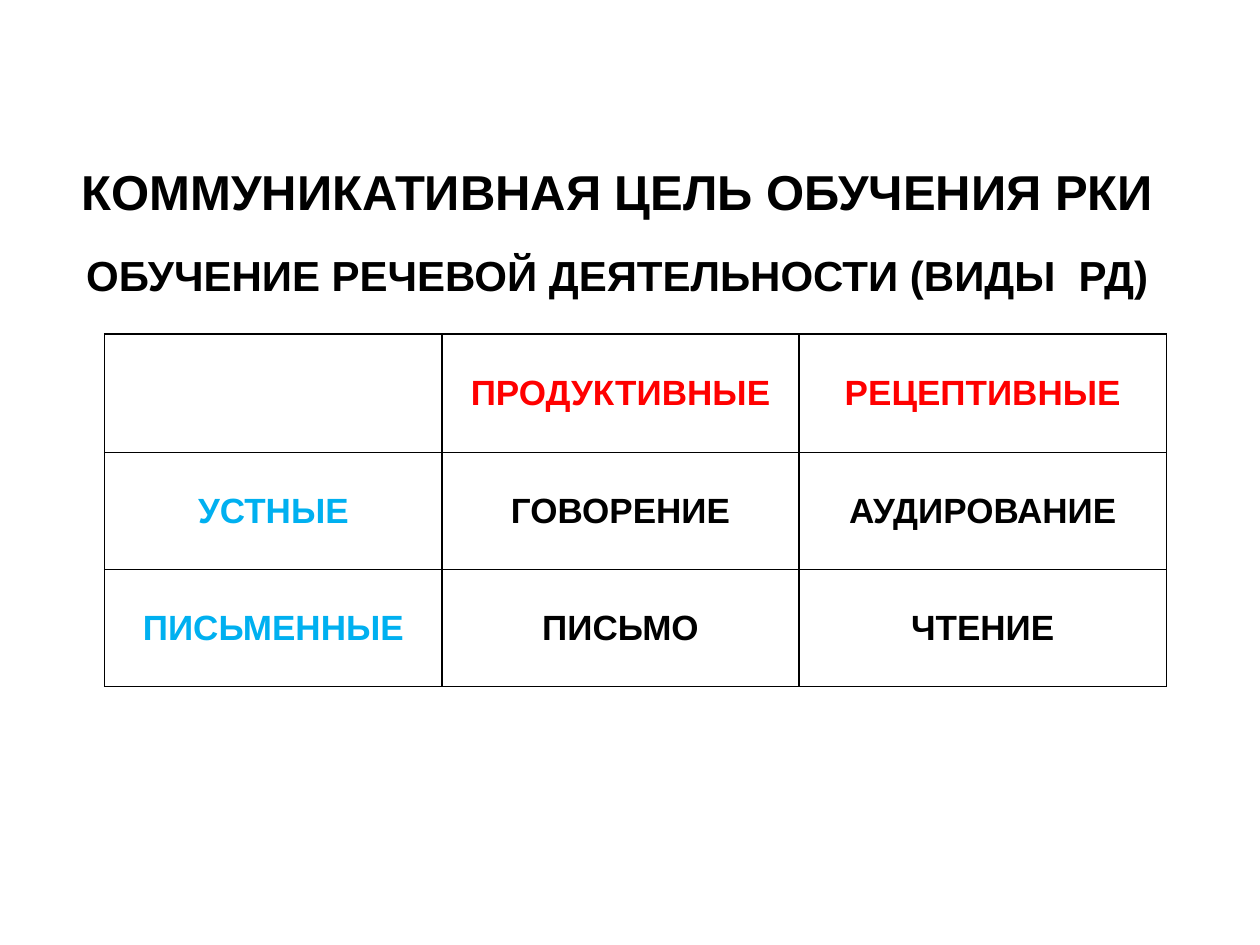
"""Build a slide with a title and a table of the kinds of speech activity."""
from lxml import etree
from pptx import Presentation
from pptx.dml.color import RGBColor
from pptx.enum.text import MSO_ANCHOR, MSO_AUTO_SIZE, PP_ALIGN
from pptx.oxml.ns import qn
from pptx.util import Inches, Pt

CENTER = PP_ALIGN.CENTER
TOP, MIDDLE = MSO_ANCHOR.TOP, MSO_ANCHOR.MIDDLE
NO_FIT = MSO_AUTO_SIZE.NONE

THEME = {
    "font": "Arial",
    "text": "000000",
    "column_head": "FF0000",
    "row_head": "00B0F0",
    "fill": "FFFFFF",
    "border": "000000",
    "title_size": 28,
    "subtitle_size": 24,
    "cell_size": 20,
    "border_width": 1,
}
TITLE = [
    ("КОММУНИКАТИВНАЯ ЦЕЛЬ ОБУЧЕНИЯ РКИ", "title_size", 0),
    ("ОБУЧЕНИЕ РЕЧЕВОЙ ДЕЯТЕЛЬНОСТИ (ВИДЫ  РД)", "subtitle_size", 17),
]
ROWS = [
    ["", "ПРОДУКТИВНЫЕ", "РЕЦЕПТИВНЫЕ"],
    ["УСТНЫЕ", "ГОВОРЕНИЕ", "АУДИРОВАНИЕ"],
    ["ПИСЬМЕННЫЕ", "ПИСЬМО", "ЧТЕНИЕ"],
]
COL_WIDTHS = [2.68, 2.83, 2.92]
ROW_HEIGHTS = [0.94, 0.93, 0.93]


def write(p, text, size, color):
    p.alignment = CENTER
    r = p.add_run()
    r.text = text
    formats = {"name": THEME["font"], "size": Pt(THEME[size]), "bold": True}
    for name, value in formats.items():
        setattr(r.font, name, value)
    r.font.color.rgb = RGBColor.from_string(THEME[color])


def add_borders(cell):
    tc_pr = cell._tc.get_or_add_tcPr()
    for i, side in enumerate(("lnL", "lnR", "lnT", "lnB")):
        ln = etree.Element(qn(f"a:{side}"), w=str(Pt(THEME["border_width"])))
        fill = etree.SubElement(ln, qn("a:solidFill"))
        etree.SubElement(fill, qn("a:srgbClr"), val=THEME["border"])
        tc_pr.insert(i, ln)


prs = Presentation()
prs.slide_width, prs.slide_height = Inches(10), Inches(7.5)
s = prs.slides.add_slide(prs.slide_layouts[5])

sp = s.shapes.title
box = {"left": 0, "top": 1.18, "width": 9.8, "height": 1.47}
for name, value in box.items():
    setattr(sp, name, Inches(value))
tf = sp.text_frame
frame = {"auto_size": NO_FIT, "word_wrap": True, "vertical_anchor": TOP, "margin_top": Inches(0.1)}
for name, value in frame.items():
    setattr(tf, name, value)
for i, (text, size, gap) in enumerate(TITLE):
    p = tf.add_paragraph() if i else tf.paragraphs[0]
    write(p, text, size, "text")
    p.space_before = Pt(gap)

table = s.shapes.add_table(
    len(ROWS), len(COL_WIDTHS), Inches(0.83), Inches(2.65),
    Inches(sum(COL_WIDTHS)), Inches(sum(ROW_HEIGHTS)),
).table
table.horz_banding = False
for col, width in zip(table.columns, COL_WIDTHS):
    col.width = Inches(width)
for row, height in zip(table.rows, ROW_HEIGHTS):
    row.height = Inches(height)

cell_format = {
    "vertical_anchor": MIDDLE,
    "margin_left": Inches(0.07),
    "margin_right": Inches(0.07),
    "margin_top": 0,
    "margin_bottom": 0,
}
for i, labels in enumerate(ROWS):
    for j, label in enumerate(labels):
        cell = table.cell(i, j)
        for name, value in cell_format.items():
            setattr(cell, name, value)
        cell.fill.solid()
        cell.fill.fore_color.rgb = RGBColor.from_string(THEME["fill"])
        add_borders(cell)
        if label:
            color = "column_head" if i == 0 else "row_head" if j == 0 else "text"
            write(cell.text_frame.paragraphs[0], label, "cell_size", color)

prs.save("out.pptx")
